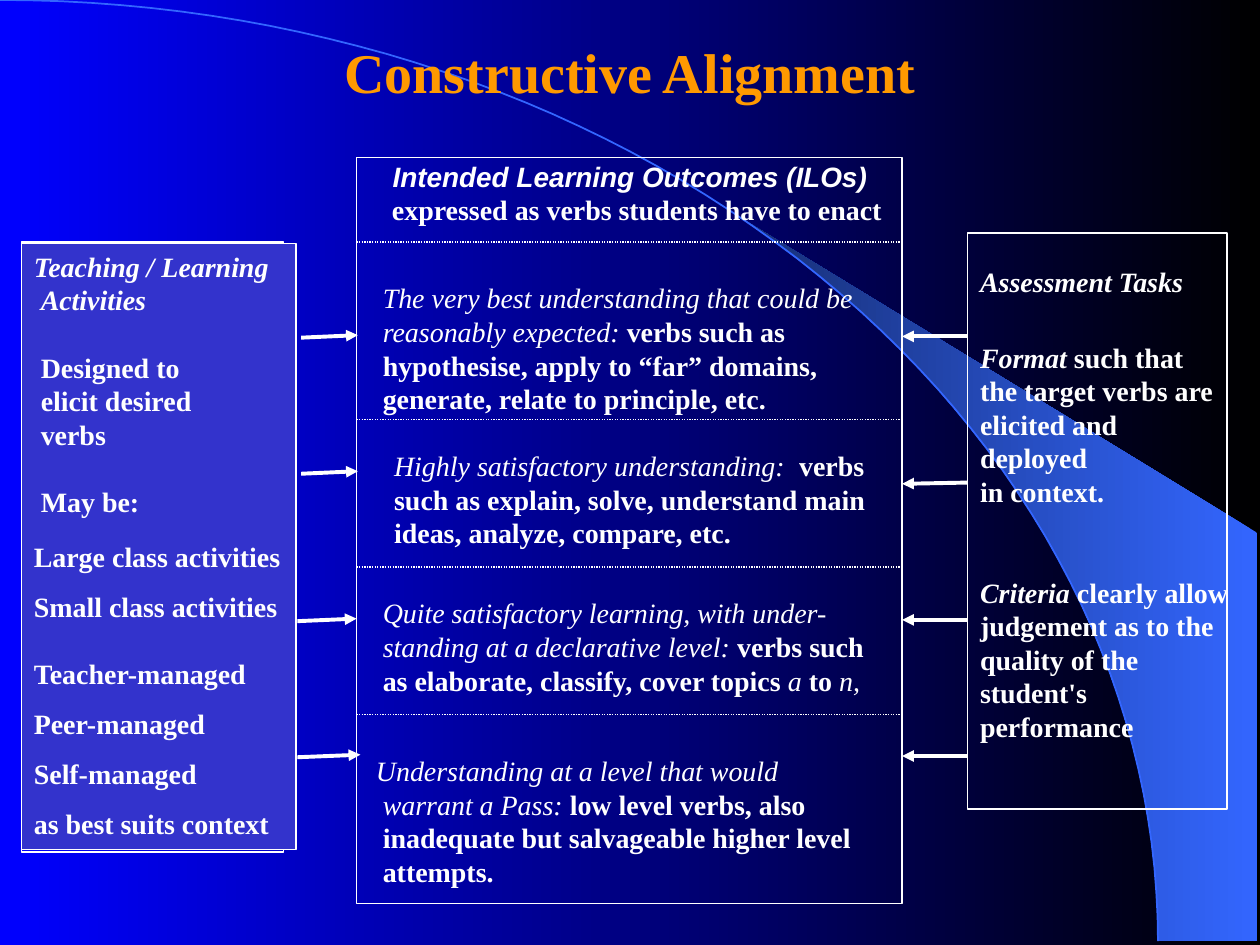
from math import cos, radians, sin
from lxml.etree import SubElement
from pptx import Presentation
from pptx.dml.color import RGBColor
from pptx.enum.dml import MSO_LINE
from pptx.enum.shapes import MSO_CONNECTOR, MSO_SHAPE
from pptx.enum.text import MSO_ANCHOR, MSO_AUTO_SIZE, PP_ALIGN
from pptx.oxml.ns import qn
from pptx.util import Inches, Pt

WHITE = RGBColor(0xFF, 0xFF, 0xFF)
BLACK = RGBColor(0x00, 0x00, 0x00)
BLUE = RGBColor(0x00, 0x00, 0xFF)
ORANGE = RGBColor(0xFF, 0x99, 0x00)
INDIGO = RGBColor(0x33, 0x33, 0xCC)
SKY = RGBColor(0x33, 0x66, 0xFF)
NAVY = RGBColor(0x17, 0x2F, 0x75)
SERIF, SANS = "Times New Roman", "Arial"
SPACE = 0.055

TITLE = [([("Constructive Alignment", "b")], 0, 0)]

# Each line: runs of (text, style), indent in spaces, points of space before.
HEADING = [
    ([("Intended Learning Outcomes (ILOs)", "bis")], 0, 0),
    ([("expressed as verbs students have to enact", "b")], 2, 0),
]
OUTCOMES = [
    ((2.83, 1.92, 4.33, 1.42), [
        ([("The very best understanding that could be", "i")], 2, 0),
        ([("reasonably expected: ", "i"), ("verbs such as", "b")], 2, 0),
        ([("hypothesise, apply to “far” domains,", "b")], 2, 0),
        ([("generate, relate to principle, etc.", "b")], 2, 0),
    ]),
    ((2.92, 3.25, 4.33, 1.16), [
        ([("Highly satisfactory understanding: ", "i"), (" verbs", "b")], 2, 0),
        ([("such as explain, solve, understand main", "b")], 2, 0),
        ([("ideas, analyze, compare, etc.", "b")], 2, 0),
    ]),
    ((2.83, 4.42, 4.33, 1.16), [
        ([("Quite satisfactory learning, with under-", "i")], 2, 0),
        ([("standing at a declarative level: ", "i"), ("verbs such", "b")], 2, 0),
        ([("as elaborate, classify, cover topics ", "b"), ("a ", "i"),
          ("to ", "b"), ("n,", "i")], 2, 0),
    ]),
    ((2.83, 5.67, 4.25, 1.42), [
        ([("Understanding at a level that would", "i")], 1, 0),
        ([("warrant a Pass: ", "i"), ("low level verbs, also", "b")], 2, 0),
        ([("inadequate but salvageable higher level", "b")], 2, 0),
        ([("attempts.", "b")], 2, 0),
    ]),
]
ACTIVITIES = [
    ([("Teaching / Learning", "bi")], 0, 0),
    ([("Activities", "bi")], 1, 0),
    ([("Designed to", "b")], 1, 19.2),
    ([("elicit desired", "b")], 1, 0),
    ([("verbs", "b")], 1, 0),
    ([("May be:", "b")], 1, 19.2),
    ([("Large class activities", "b")], 0, 12),
    ([("Small class activities", "b")], 0, 9.5),
    ([("Teacher-managed", "b")], 0, 19.2),
    ([("Peer-managed", "b")], 0, 9.5),
    ([("Self-managed", "b")], 0, 9.5),
    ([("as best suits context", "b")], 0, 9.5),
]
ASSESSMENT = [
    ([("Assessment Tasks", "bi")], 0, 0),
    ([("Format", "bi"), (" such that", "b")], 0, 24),
    ([("the target verbs are", "b")], 0, 0),
    ([("elicited and", "b")], 0, 0),
    ([("deployed", "b")], 0, 0),
    ([("in context.", "b")], 0, 0),
    ([("Criteria", "bi"), (" clearly allow", "b")], 0, 38.4),
    ([("judgement as to the", "b")], 0, 0),
    ([("quality of the", "b")], 0, 0),
    ([("student's", "b")], 0, 0),
    ([("performance", "b")], 0, 0),
]
DIVIDERS = [1.92, 3.33, 4.5, 5.67]
ARROWS = [
    (2.39, 2.68, 2.84, 2.66), (2.39, 3.76, 2.84, 3.74),
    (2.36, 4.93, 2.83, 4.91), (2.36, 6.01, 2.86, 5.99),
    (7.68, 2.67, 7.16, 2.67), (7.68, 3.83, 7.16, 3.84),
    (7.68, 4.92, 7.16, 4.92), (7.68, 6, 7.16, 6),
]


def write(shape, lines, size=16, color=WHITE, align=PP_ALIGN.LEFT,
          top=0.05, right=0.1, pitch=Pt(19.2)):
    frame = shape.text_frame
    frame.word_wrap = True
    frame.auto_size = MSO_AUTO_SIZE.NONE
    frame.vertical_anchor = MSO_ANCHOR.TOP
    frame.margin_left, frame.margin_right = Inches(0.1), Inches(right)
    frame.margin_top, frame.margin_bottom = Inches(top), Inches(0.05)
    for index, (runs, indent, before) in enumerate(lines):
        line = frame.add_paragraph() if index else frame.paragraphs[0]
        line.alignment, line.line_spacing = align, pitch
        line.space_before = Pt(before)
        line._p.get_or_add_pPr().set("marL", str(Inches(indent * SPACE)))
        for text, style in runs:
            run = line.add_run()
            run.text = text
            run.font.name = SANS if "s" in style else SERIF
            run.font.size = Pt(size)
            run.font.bold, run.font.italic = "b" in style, "i" in style
            run.font.color.rgb = color


def shade(fill, start, end):
    fill.gradient()
    fill.gradient_angle = 180
    for stop, color, position in zip(fill.gradient_stops, (start, end), (0, 1)):
        stop.color.rgb, stop.position = color, position


def panel(slide, box, fill=None, line=1):
    shape = slide.shapes.add_shape(MSO_SHAPE.ROUNDED_RECTANGLE, *map(Inches, box))
    shape.adjustments[0] = 0
    shape.shadow.inherit = False
    if fill is None:
        shape.fill.background()
    else:
        shape.fill.solid()
        shape.fill.fore_color.rgb = fill
    if line:
        shape.line.color.rgb, shape.line.width = WHITE, Pt(line)
    else:
        shape.line.fill.background()
    return shape


def connect(slide, ends, width):
    line = slide.shapes.add_connector(MSO_CONNECTOR.STRAIGHT, *map(Inches, ends))
    line.line.color.rgb, line.line.width = WHITE, Pt(width)
    SubElement(line._element.spPr, qn("a:effectLst"))
    return line


def outline(slide, points, closed):
    start, *rest = [(round(x * 1000), round(y * 1000)) for x, y in points]
    builder = slide.shapes.build_freeform(*start, scale=Inches(1) / 1000)
    builder.add_line_segments(rest, close=closed)
    shape = builder.convert_to_shape()
    shape.shadow.inherit = False
    return shape


def ellipse(last, steps):
    angles = [radians(last * step / steps) for step in range(steps + 1)]
    return [(9.19 * cos(a), 7.47 - 7.47 * sin(a)) for a in angles]


def main():
    deck = Presentation()
    deck.slide_width, deck.slide_height = Inches(10), Inches(7.5)
    slide = deck.slides.add_slide(deck.slide_layouts[5])
    shade(slide.background.fill, BLACK, BLUE)

    wedge = outline(slide, ellipse(50.2, 24) + [(9.98, 4.23), (9.98, 7.47)], True)
    shade(wedge.fill, SKY, NAVY)
    wedge.line.fill.background()
    arc = outline(slide, ellipse(90, 60), False)
    arc.fill.background()
    arc.line.color.rgb, arc.line.width = SKY, Pt(1)

    title = slide.shapes.title
    slide.shapes.element.append(title.element)
    title.left, title.top = Inches(0), Inches(0.25)
    title.width, title.height = Inches(10), Inches(0.61)
    write(title, TITLE, size=32, color=ORANGE, align=PP_ALIGN.CENTER, pitch=1.0)

    panel(slide, (2.83, 1.25, 4.33, 5.92))
    heading = slide.shapes.add_textbox(*map(Inches, (2.75, 1.25, 4.5, 0.6)))
    write(heading, HEADING, align=PP_ALIGN.CENTER, top=0.02, pitch=Pt(18.9))
    for box, lines in OUTCOMES:
        write(slide.shapes.add_textbox(*map(Inches, box)), lines, top=0.31)

    panel(slide, (0.17, 1.92, 2.08, 4.84))
    activities = panel(slide, (0.17, 1.93, 2.18, 4.81), fill=INDIGO, line=0.75)
    write(activities, ACTIVITIES, right=0)

    for y in DIVIDERS:
        divider = connect(slide, (2.83, y, 7.17, y), 0.75)
        divider.line.dash_style = MSO_LINE.ROUND_DOT
    for ends in ARROWS:
        arrow = connect(slide, ends, 2.25)
        SubElement(arrow.line._get_or_add_ln(), qn("a:tailEnd"), type="triangle")

    panel(slide, (7.68, 1.85, 2.06, 4.57))
    assessment = panel(slide, (7.68, 2.05, 2.18, 4.16), line=None)
    write(assessment, ASSESSMENT, right=0)

    deck.save("out.pptx")


if __name__ == "__main__":
    main()
